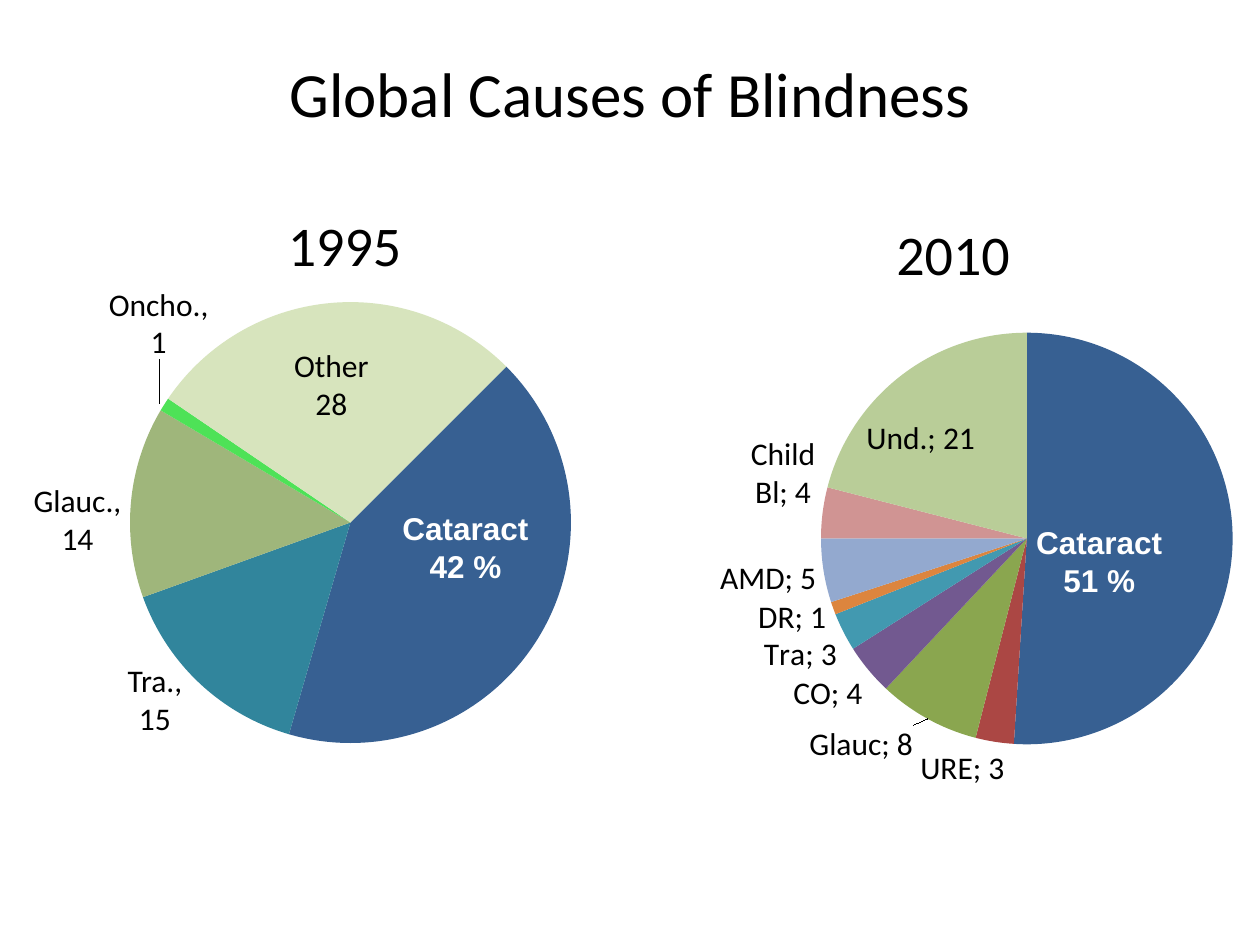
from dataclasses import dataclass, field

from lxml.etree import SubElement
from pptx import Presentation
from pptx.chart.data import CategoryChartData
from pptx.dml.color import RGBColor
from pptx.enum.chart import XL_CHART_TYPE as ChartType
from pptx.enum.shapes import MSO_CONNECTOR as Connector
from pptx.enum.text import MSO_ANCHOR as Anchor, MSO_AUTO_SIZE as AutoSize, PP_ALIGN as Align
from pptx.oxml import parse_xml
from pptx.oxml.ns import nsdecls, qn
from pptx.util import Pt


@dataclass(frozen=True)
class Theme:
    black: str = "000000"
    white: str = "FFFFFF"
    body_font: str = "Calibri"
    accent_font: str = "Arial"
    title_size: float = 36
    year_size: float = 32
    label_size: float = 18
    cataract: str = "376092"
    causes_1995: tuple[str, ...] = ("31859C", "9FB67B", "4EE257", "D7E4BD")
    causes_2010: tuple[str, ...] = (
        "AB4744", "8AA64F", "725990", "4299B0", "DC853E", "93A9CF", "D09493", "B9CD98")


THEME = Theme()


@dataclass(frozen=True)
class Box:
    left: float
    top: float
    width: float
    height: float

    def points(self) -> tuple[Pt, Pt, Pt, Pt]:
        return Pt(self.left), Pt(self.top), Pt(self.width), Pt(self.height)


@dataclass(frozen=True)
class Label:
    text: str
    box: Box
    style: dict = field(default_factory=dict)


@dataclass(frozen=True)
class SliceLabel:
    cause: str
    shift: tuple[float, float]
    position: str = "outEnd"


@dataclass(frozen=True)
class Pie:
    box: Box
    causes: dict[str, int]
    colors: tuple[str, ...]
    plot: tuple[float, float, float, float]
    start_angle: int = 0
    slice_labels: tuple[SliceLabel, ...] = ()


WHITE_BOLD = dict(font=THEME.accent_font, color=THEME.white, bold=True)
YEAR = dict(size=THEME.year_size)

PIES = (
    Pie(Box(396, 126, 318, 356.4),
        {"Cat": 51, "URE": 3, "Glauc": 8, "CO": 4, "Tra": 3, "DR": 1, "AMD": 5,
         "Child Bl": 4, "Und.": 21},
        (THEME.cataract, *THEME.causes_2010), (0.23, 0.18, 0.74, 0.66),
        slice_labels=(
            SliceLabel("URE", (0.02, 0)),
            SliceLabel("Glauc", (-0.02, 0)),
            SliceLabel("DR", (0, -0.02)),
            SliceLabel("AMD", (0, -0.02)),
            SliceLabel("Und.", (-0.07, 0.06), "inEnd"))),
    Pie(Box(54.7, 134.6, 280, 312.5),
        {"1": 42, "2": 15, "3": 14, "4": 1, "5": 28},
        (THEME.cataract, *THEME.causes_1995), (0.07, 0.12, 0.9, 0.81), start_angle=45),
)
LABELS = (
    Label("Cataract\n42 %", Box(222.5, 287.3, 87, 50.4), WHITE_BOLD),
    Label("Other\n28", Box(160.6, 194.4, 57.6, 51)),
    Label("Glauc.,\n14", Box(11.5, 271.4, 65.5, 51)),
    Label("Tra.,\n15", Box(64.8, 374.4, 47.5, 51)),
    Label("Oncho.,\n1", Box(54.7, 159.1, 72, 51)),
    Label("Cataract\n51 %", Box(584.6, 295.2, 87, 50.4), WHITE_BOLD),
    Label("1995", Box(157, 116.6, 80, 46), YEAR),
    Label("2010", Box(504.7, 121.7, 80, 46), YEAR),
)


def write_text(frame, text: str, *, size: float = THEME.label_size,
               font: str = THEME.body_font, color: str = THEME.black,
               bold: bool = False) -> None:
    frame.text = text
    for paragraph in frame.paragraphs:
        paragraph.alignment = Align.CENTER
        paragraph.font.size = Pt(size)
        paragraph.font.name = font
        paragraph.font.bold = bold
        paragraph.font.color.rgb = RGBColor.from_string(color)


def draw_label(slide, label: Label) -> None:
    frame = slide.shapes.add_textbox(*label.box.points()).text_frame
    frame.word_wrap = False
    frame.auto_size = AutoSize.SHAPE_TO_FIT_TEXT
    write_text(frame, label.text, **label.style)


def manual_layout(x: float, y: float, extra: str = "", target: str = "") -> str:
    return (f'<c:layout {nsdecls("c")}><c:manualLayout>{target}'
            f'<c:x val="{x}"/><c:y val="{y}"/>{extra}</c:manualLayout></c:layout>')


def place_plot(plot_area, plot: tuple[float, float, float, float]) -> None:
    for layout in plot_area.findall(qn("c:layout")):
        plot_area.remove(layout)
    x, y, width, height = plot
    target = '<c:layoutTarget val="inner"/><c:xMode val="edge"/><c:yMode val="edge"/>'
    extra = f'<c:w val="{width}"/><c:h val="{height}"/>'
    plot_area.insert(0, parse_xml(manual_layout(x, y, extra, target)))


def add_slice_labels(series, pie: Pie) -> None:
    def shown(position: str) -> str:
        return (f'<c:dLblPos val="{position}"/><c:showLegendKey val="0"/>'
                '<c:showVal val="1"/><c:showCatName val="1"/><c:showSerName val="0"/>'
                '<c:showPercent val="0"/><c:showBubbleSize val="0"/>'
                '<c:separator>; </c:separator>')

    causes = list(pie.causes)
    shifted = "".join(
        f'<c:dLbl><c:idx val="{causes.index(label.cause)}"/>{manual_layout(*label.shift)}'
        f'{shown(label.position)}</c:dLbl>' for label in pie.slice_labels)
    labels = parse_xml(
        f'<c:dLbls {nsdecls("c")}><c:dLbl><c:idx val="0"/><c:delete val="1"/></c:dLbl>'
        f'{shifted}{shown("outEnd")}<c:showLeaderLines val="1"/></c:dLbls>')
    series.find(qn("c:cat")).addprevious(labels)


def draw_pie(slide, pie: Pie) -> None:
    data = CategoryChartData()
    data.categories = list(pie.causes)
    data.add_series("Series 1", list(pie.causes.values()))
    chart = slide.shapes.add_chart(ChartType.PIE, *pie.box.points(), data).chart
    chart.has_title = False
    chart.has_legend = False
    chart.font.name = THEME.body_font
    chart.font.size = Pt(THEME.label_size)
    chart.font.color.rgb = RGBColor.from_string(THEME.black)
    plot = chart.plots[0]
    plot.vary_by_categories = True
    series = plot.series[0]
    for index, color in enumerate(pie.colors):
        wedge = series.points[index].format
        wedge.fill.solid()
        wedge.fill.fore_color.rgb = RGBColor.from_string(color)
        wedge.line.fill.background()
    series_xml = chart.element.find(".//" + qn("c:ser"))
    pie_xml = series_xml.getparent()
    place_plot(pie_xml.getparent(), pie.plot)
    if pie.slice_labels:
        add_slice_labels(series_xml, pie)
    for angle in pie_xml.findall(qn("c:firstSliceAng")):
        pie_xml.remove(angle)
    SubElement(pie_xml, qn("c:firstSliceAng")).set("val", str(pie.start_angle))


def draw_pointer(slide, x: float, top: float, bottom: float) -> None:
    pointer = slide.shapes.add_connector(Connector.STRAIGHT, Pt(x), Pt(top), Pt(x), Pt(bottom))
    pointer.line.color.rgb = RGBColor.from_string(THEME.black)
    pointer.line.width = Pt(0.5)
    SubElement(pointer.element.spPr, qn("a:effectLst"))


def main() -> None:
    deck = Presentation()
    deck.slide_width, deck.slide_height = Pt(720), Pt(540)
    slide = deck.slides.add_slide(deck.slide_layouts[5])
    title = slide.shapes.title
    title.left, title.top, title.width, title.height = Box(36, 21.6, 648, 62.6).points()
    title.text_frame.vertical_anchor = Anchor.MIDDLE
    write_text(title.text_frame, "Global Causes of Blindness", size=THEME.title_size)
    for pie in PIES:
        draw_pie(slide, pie)
    for label in LABELS:
        draw_label(slide, label)
    draw_pointer(slide, 91.4, 205.2, 231.1)
    deck.save("out.pptx")


if __name__ == "__main__":
    main()
